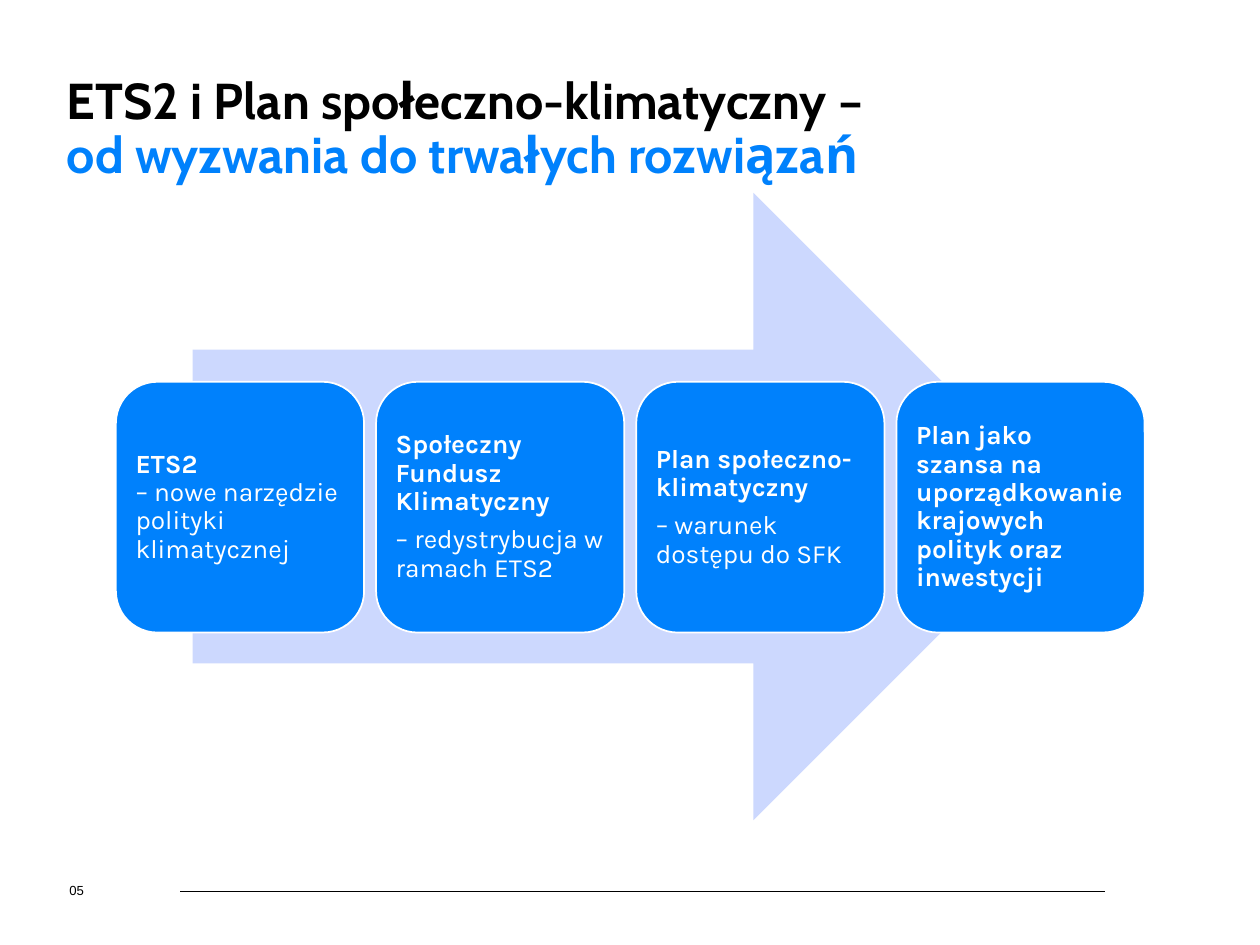
from copy import deepcopy
from dataclasses import dataclass

from lxml.etree import SubElement
from pptx import Presentation
from pptx.dml.color import RGBColor
from pptx.enum.shapes import MSO_CONNECTOR, MSO_SHAPE
from pptx.enum.text import MSO_ANCHOR, MSO_AUTO_SIZE, PP_ALIGN
from pptx.oxml.ns import qn
from pptx.util import Inches, Pt

BLUE, PALE, BLACK, WHITE = "0081FC", "CCD8FE", "000000", "FFFFFF"
STEP_LEFT, STEP_TOP, STEP_PITCH = 0.92, 3.03, 2.065
STEP_WIDTH, STEP_HEIGHT = 1.97, 1.99


@dataclass
class Step:
    heading: str
    detail: str = ""
    gap: float = 5.7  # points after each paragraph


STEPS = [
    Step("ETS2", "– nowe narzędzie polityki klimatycznej", gap=0),
    Step("Społeczny Fundusz Klimatyczny", "– redystrybucja w ramach ETS2"),
    Step("Plan społeczno-klimatyczny", "– warunek dostępu do SFK"),
    Step("Plan jako szansa na uporządkowanie krajowych polityk oraz inwestycji"),
]


def rgb(color: str) -> RGBColor:
    return RGBColor.from_string(color)


def style_run(r, font: str, size: float, color: str, bold: bool = False) -> None:
    r.font.name, r.font.size, r.font.bold = font, Pt(size), bold
    r.font.color.rgb = rgb(color)


def set_frame(tf, inset: float, anchor) -> None:
    tf.word_wrap, tf.auto_size = True, MSO_AUTO_SIZE.NONE
    tf.vertical_anchor = anchor
    tf.margin_left = tf.margin_right = Inches(inset)
    tf.margin_top = tf.margin_bottom = Inches(inset)


def add_filled(s, kind, left: float, top: float, width: float, height: float, fill: str):
    sp = s.shapes.add_shape(kind, Inches(left), Inches(top), Inches(width), Inches(height))
    sp.shadow.inherit = False
    sp.fill.solid()
    sp.fill.fore_color.rgb = rgb(fill)
    sp.line.fill.background()
    return sp


def add_title(s) -> None:
    sp = s.shapes.title
    sp.left, sp.top, sp.width, sp.height = Inches(0.53), Inches(0.6), Inches(8.47), Inches(0.46)
    tf = sp.text_frame
    set_frame(tf, 0, MSO_ANCHOR.TOP)
    tf.text = "ETS2 i Plan społeczno-klimatyczny –\vod wyzwania do trwałych rozwiązań"
    p = tf.paragraphs[0]
    p.alignment, p.line_spacing = PP_ALIGN.LEFT, 0.9
    for r, color in zip(p.runs, (BLACK, BLUE)):
        style_run(r, "Cabin", 28.8, color, True)
    # The line break takes the size of the text before it
    p._p.find(qn("a:br")).append(deepcopy(p.runs[0]._r.rPr))


def add_step(s, index: int, step: Step) -> None:
    left = STEP_LEFT + index * STEP_PITCH
    sp = add_filled(s, MSO_SHAPE.ROUNDED_RECTANGLE, left, STEP_TOP, STEP_WIDTH, STEP_HEIGHT, BLUE)
    sp.line.color.rgb = rgb(WHITE)
    sp.line.width = Pt(1)
    tf = sp.text_frame
    set_frame(tf, 0.06, MSO_ANCHOR.MIDDLE)
    tf.text = "\n".join(filter(None, (step.heading, step.detail)))
    for i, p in enumerate(tf.paragraphs):
        p.alignment, p.line_spacing, p.space_after = PP_ALIGN.LEFT, 0.9, Pt(step.gap)
        style_run(p.runs[0], "Karla", 15, WHITE, bold=i == 0)


def add_footer(s) -> None:
    rule = s.shapes.add_connector(
        MSO_CONNECTOR.STRAIGHT, Inches(1.43), Inches(7.07), Inches(8.77), Inches(7.07))
    rule.line.color.rgb = rgb(BLACK)
    rule.line.width = Pt(0.25)
    SubElement(rule._element.spPr, qn("a:effectLst"))

    number = s.shapes.add_textbox(Inches(0.55), Inches(7.01), Inches(1.25), Inches(0.11))
    tf = number.text_frame
    set_frame(tf, 0, MSO_ANCHOR.MIDDLE)
    tf.text = "05"
    style_run(tf.paragraphs[0].runs[0], "Arial", 7.5, BLACK)


def main() -> None:
    prs = Presentation()
    prs.slide_width, prs.slide_height = Inches(10), Inches(7.5)
    s = prs.slides.add_slide(prs.slide_layouts[5])

    add_title(s)
    # Arrow behind the row of steps
    add_filled(s, MSO_SHAPE.RIGHT_ARROW, 1.53, 1.53, 6.94, 4.98, PALE)
    for i, step in enumerate(STEPS):
        add_step(s, i, step)
    add_footer(s)
    prs.save("out.pptx")


if __name__ == "__main__":
    main()
